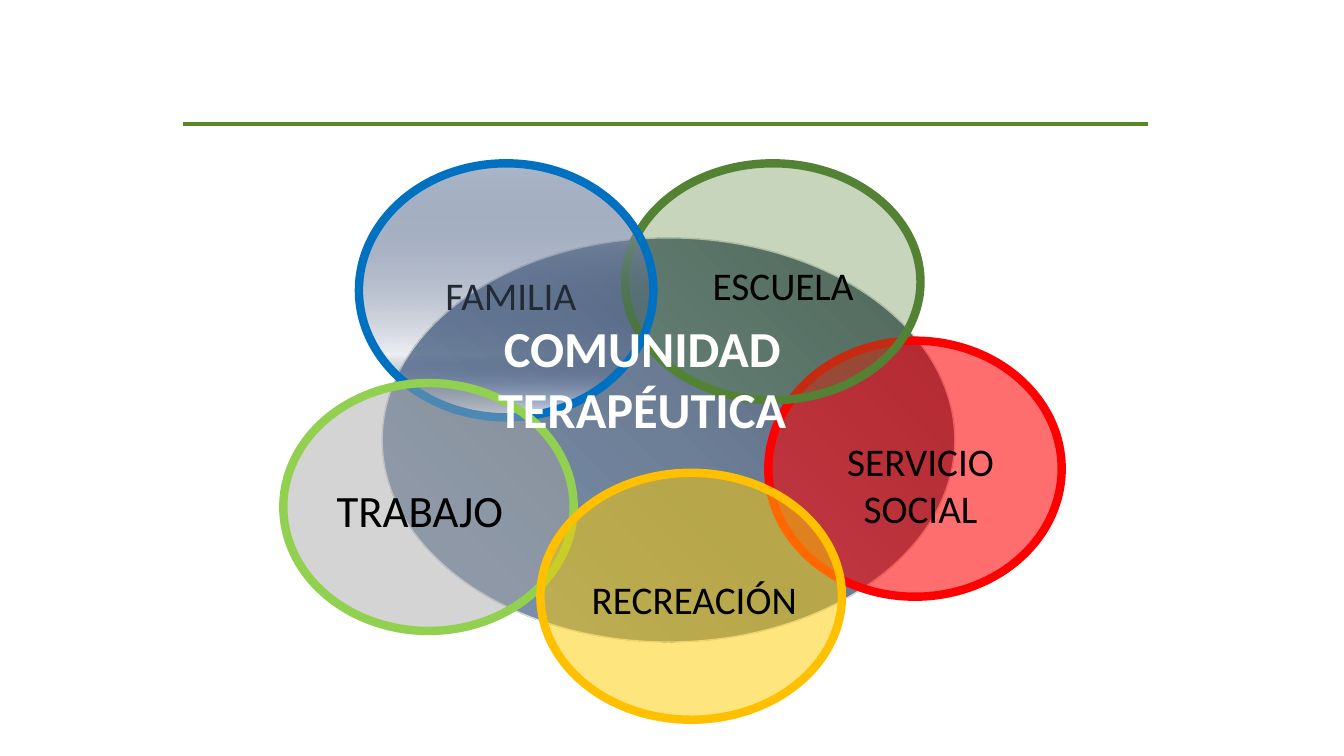
"""Builds the slide of overlapping circles around the therapeutic community."""
from lxml import etree
from pptx import Presentation
from pptx.dml.color import RGBColor
from pptx.enum import shapes, text
from pptx.oxml import ns
from pptx.util import Inches, Pt

BLACK = RGBColor(0x00, 0x00, 0x00)
WHITE = RGBColor(0xFF, 0xFF, 0xFF)
NAVY = RGBColor(0x22, 0x2A, 0x35)
PALE_GRAY = RGBColor(0xDB, 0xDB, 0xDB)
GRAY = RGBColor(0xA5, 0xA5, 0xA5)
RED = RGBColor(0xFF, 0x00, 0x00)
GREEN = RGBColor(0x54, 0x82, 0x35)
LIME = RGBColor(0x92, 0xD0, 0x50)
BLUE = RGBColor(0x00, 0x70, 0xC0)
YELLOW = RGBColor(0xFF, 0xCC, 0x00)
AMBER = RGBColor(0xFF, 0xC0, 0x00)
RULE_GREEN = RGBColor(0x58, 0x87, 0x25)

# Gradient stops: position %, colour, opacity %
CORE_STOPS = [(0, RGBColor(0x4C, 0x59, 0x6A), 100),
              (50, RGBColor(0x6D, 0x7F, 0x97), 100),
              (100, RGBColor(0x81, 0x96, 0xB4), 100)]
FAMILY_STOPS = [(0, RGBColor(0xAD, 0xB9, 0xCA), 100),
                (75, RGBColor(0x20, 0x38, 0x64), 8),
                (100, RGBColor(0xE1, 0xEB, 0xFB), 100)]

# Gradient ovals: box, stops, clockwise angle, outline, width
# Solid ovals: box, fill, opacity %, outline, width
OVALS = [
    ((3.79, 2.36, 5.68, 4.01), CORE_STOPS, 135, PALE_GRAY, 1),
    ((7.62, 3.38, 2.91, 2.54), RED, 57, RED, 6),
    ((6.2, 1.62, 2.93, 2.35), GREEN, 33, GREEN, 6),
    ((3.56, 1.62, 2.92, 2.52), FAMILY_STOPS, 90, BLUE, 6),
    ((2.81, 3.8, 2.88, 2.46), GRAY, 47, LIME, 6),
    ((5.36, 4.69, 2.99, 2.45), YELLOW, 51, AMBER, 6),
]
LEFT, CENTER = text.PP_ALIGN.LEFT, text.PP_ALIGN.CENTER
LABELS = [
    ("FAMILIA", (4.32, 2.64, 1.58, 0.57), 28, NAVY, False, LEFT),
    ("ESCUELA", (6.97, 2.54, 1.76, 0.57), 28, BLACK, False, LEFT),
    ("TRABAJO", (3.24, 4.74, 1.87, 0.64), 32, BLACK, False, LEFT),
    ("RECREACIÓN", (5.77, 5.66, 2.35, 0.57), 28, BLACK, False, LEFT),
    ("SERVICIO SOCIAL", (8.11, 4.29, 2.04, 1.04), 28, BLACK, False, CENTER),
    ("COMUNIDAD TERAPÉUTICA", (4.81, 3.1, 3.12, 1.31), 36, WHITE, True, CENTER),
]
RULE = (1.82, 1.23, 11.39, 1.23)


def inches(values):
    return [Inches(value) for value in values]


def add_alpha(color_element, percent):
    etree.SubElement(color_element, ns.qn("a:alpha"), val=str(percent * 1000))


def fill_gradient(oval, stops, angle):
    oval.fill.gradient()
    oval.fill.gradient_angle = 360 - angle
    stop_list = oval.element.spPr.find(".//" + ns.qn("a:gsLst"))
    for old_stop in list(stop_list):
        stop_list.remove(old_stop)
    for position, color, opacity in stops:
        stop = etree.SubElement(stop_list, ns.qn("a:gs"), pos=str(position * 1000))
        color_element = etree.SubElement(stop, ns.qn("a:srgbClr"), val=str(color))
        if opacity < 100:
            add_alpha(color_element, opacity)


def fill_solid(oval, color, opacity):
    oval.fill.solid()
    oval.fill.fore_color.rgb = color
    add_alpha(oval.element.spPr.find(".//" + ns.qn("a:srgbClr")), opacity)


def add_oval(slide, box, paint, setting, outline, width):
    oval = slide.shapes.add_shape(shapes.MSO_SHAPE.OVAL, *inches(box))
    oval.shadow.inherit = False
    if isinstance(paint, list):
        fill_gradient(oval, paint, setting)
    else:
        fill_solid(oval, paint, setting)
    oval.line.color.rgb = outline
    oval.line.width = Pt(width)


def add_label(slide, wording, box, size, color, bold, alignment):
    label = slide.shapes.add_textbox(*inches(box))
    label.text_frame.word_wrap = True
    label.text_frame.text = wording
    paragraph = label.text_frame.paragraphs[0]
    paragraph.alignment = alignment
    font = paragraph.runs[0].font
    font.name, font.size, font.bold = "Calibri", Pt(size), bold
    font.color.rgb = color


def add_rule(slide):
    rule = slide.shapes.add_connector(shapes.MSO_CONNECTOR.STRAIGHT, *inches(RULE))
    rule.line.color.rgb = RULE_GREEN
    rule.line.width = Pt(3)
    etree.SubElement(rule.element.spPr, ns.qn("a:effectLst"))


def main():
    deck = Presentation()
    deck.slide_width, deck.slide_height = inches((13.33, 7.5))
    slide = deck.slides.add_slide(deck.slide_layouts[6])
    for oval in OVALS:
        add_oval(slide, *oval)
    for label in LABELS:
        add_label(slide, *label)
    add_rule(slide)
    deck.save("out.pptx")


if __name__ == "__main__":
    main()
